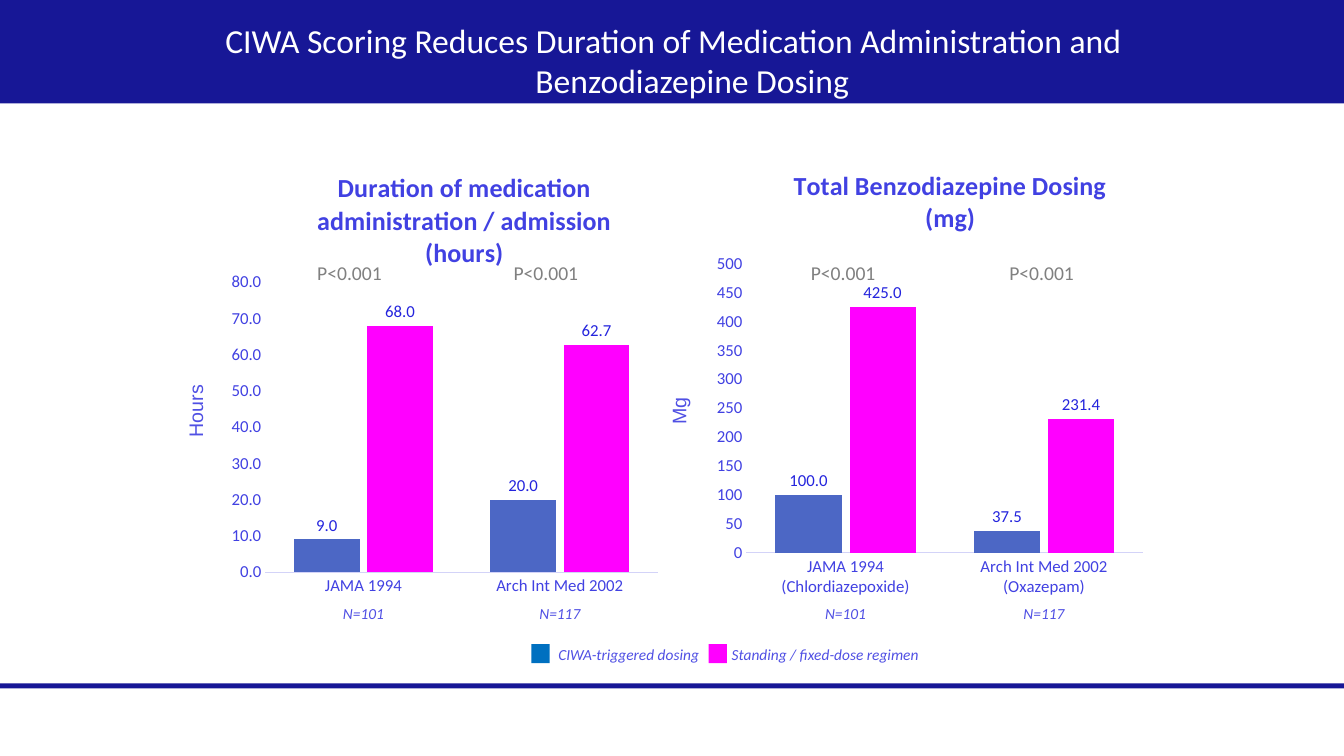
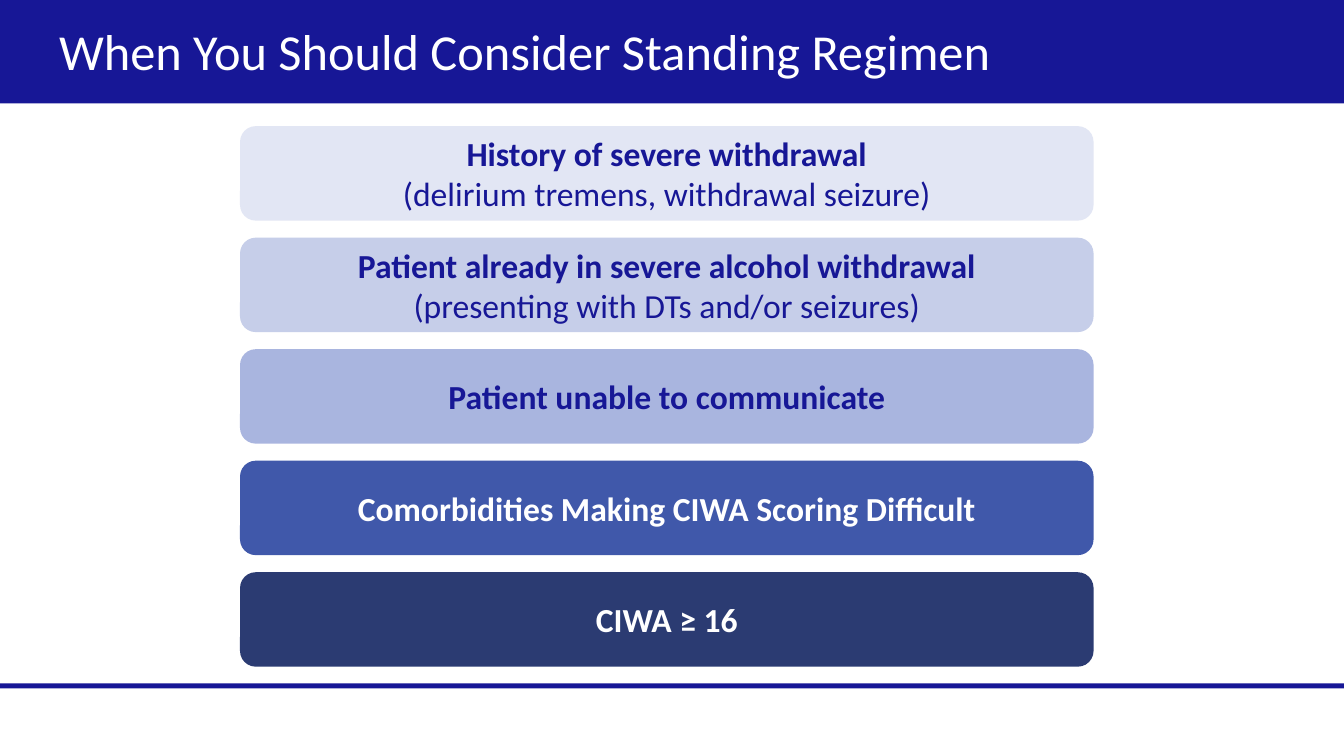
from lxml import etree
from pptx import Presentation
from pptx.chart.data import CategoryChartData
from pptx.dml.color import RGBColor
from pptx.enum.chart import XL_CHART_TYPE, XL_LABEL_POSITION, XL_TICK_MARK
from pptx.enum.shapes import MSO_SHAPE
from pptx.enum.text import MSO_ANCHOR, PP_ALIGN
from pptx.oxml.ns import qn
from pptx.util import Cm, Pt

COLUMN = XL_CHART_TYPE.COLUMN_CLUSTERED
OUTSIDE = XL_LABEL_POSITION.OUTSIDE_END
NO_TICK = XL_TICK_MARK.NONE
RECT, ROUND = MSO_SHAPE.RECTANGLE, MSO_SHAPE.ROUNDED_RECTANGLE
MIDDLE = MSO_ANCHOR.MIDDLE
LEFT, CENTER = PP_ALIGN.LEFT, PP_ALIGN.CENTER

HEX = {
    "navy": "171796", "white": "FFFFFF", "bar": "4C67C5", "pink": "FF00FF",
    "key": "0070C0", "axis": "4141E2", "line": "D3D3F8", "value": "2424DD",
    "note": "5050E4", "gray": "808080", "pale": "E2E6F4", "light": "C6CEE9",
    "mid": "A9B5DF", "deep": "4058AA", "dark": "2B3B72",
}
BODY, SIDE = "Calibri", "Arial"
WIDE, HIGH = 33.87, 19.05

TITLES = [
    ("CIWA Scoring Reduces Duration of Medication Administration and "
     "Benzodiazepine Dosing", 4.5, 24.94, 24, CENTER),
    ("When You Should Consider Standing Regimen", 1.24, 31.75, 36, LEFT),
]
CHART_TOP, CHART_W, CHART_H = 3.68, 11.66, 11.71
CHARTS = [
    {"title": "Duration of medication administration / admission (hours)",
     "spot": (0.22, 0.04), "left": 5.31, "plot": (0.118, 0.293, 0.849, 0.624),
     "cats": ["JAMA 1994", "Arch Int Med 2002"],
     "rows": [(9, 20), (68, 62.7)], "max": 80, "step": 10, "fmt": "0.0",
     "unit": "Hours", "unit_x": 4.93, "shift": -0.35},
    {"title": "Total Benzodiazepine Dosing (mg)",
     "spot": (0.2, 0.035), "left": 17.55, "plot": (0.108, 0.253, 0.858, 0.622),
     "cats": ["JAMA 1994 (Chlordiazepoxide)", "Arch Int Med 2002 (Oxazepam)"],
     "rows": [(100, 37.5), (425, 231.4)], "max": 500, "step": 50, "fmt": "0",
     "unit": "Mg", "unit_x": 17.11, "shift": -0.06},
]
COUNTS = ["N=101", "N=117"]
KEYS = [
    ("CIWA-triggered dosing", "key", 13.39, 13.82, 4.09),
    ("Standing / fixed-dose regimen", "pink", 17.86, 18.19, 5.26),
]
CASES = [
    (["History of severe withdrawal", "(delirium tremens, withdrawal seizure)"],
     "pale", "navy"),
    (["Patient already in severe alcohol withdrawal",
      "(presenting with DTs and/or seizures)"], "light", "navy"),
    (["Patient unable to communicate"], "mid", "navy"),
    (["Comorbidities Making CIWA Scoring Difficult"], "deep", "white"),
    (["CIWA ≥ 16"], "dark", "white"),
]


def rgb(name):
    return RGBColor.from_string(HEX[name])


def style(font, size, color, face=BODY, bold=False, italic=False):
    font.size, font.name = Pt(size), face
    font.bold, font.italic = bold, italic
    font.color.rgb = rgb(color)


def block(slide, kind, x, y, w, h, color):
    shape = slide.shapes.add_shape(kind, Cm(x), Cm(y), Cm(w), Cm(h))
    shape.shadow.inherit = False
    shape.fill.solid()
    shape.fill.fore_color.rgb = rgb(color)
    shape.line.fill.background()
    return shape


def label(slide, text, x, y, w, h, size, color, align=CENTER, wrap=False, **look):
    box = slide.shapes.add_textbox(Cm(x), Cm(y), Cm(w), Cm(h))
    box.text_frame.word_wrap = wrap
    para = box.text_frame.paragraphs[0]
    para.text, para.alignment = text, align
    style(para.font, size, color, **look)
    return box


def start(deck, title):
    slide = deck.slides.add_slide(deck.slide_layouts[6])
    block(slide, RECT, 0, 0, WIDE, 2.61, "navy")
    block(slide, RECT, 0, 17.22, WIDE, 0.13, "navy")
    text, x, w, size, align = title
    box = label(slide, text, x, 0.38, w, 1.88, size, "white", align, True)
    props = box.text_frame.paragraphs[0]._p.get_or_add_pPr()
    props.set("marL", str(Cm(0.95)))
    props.set("indent", str(Cm(-0.95)))
    return slide


def place(parent, spots, inner=False):
    layout = parent.find(qn("c:layout"))
    if layout is None:
        layout = etree.Element(qn("c:layout"))
        parent.insert(1 if parent.find(qn("c:tx")) is not None else 0, layout)
    manual = etree.SubElement(layout, qn("c:manualLayout"))
    pairs = [("layoutTarget", "inner")] if inner else []
    pairs += [("xMode", "edge"), ("yMode", "edge")]
    pairs += zip("xywh", map(str, spots))
    for tag, val in pairs:
        etree.SubElement(manual, qn("c:" + tag)).set("val", val)


def draw_chart(slide, item):
    data = CategoryChartData()
    data.categories = item["cats"]
    for i, row in enumerate(item["rows"], 1):
        data.add_series(f"Series {i}", row)
    chart = slide.shapes.add_chart(
        COLUMN, Cm(item["left"]), Cm(CHART_TOP), Cm(CHART_W), Cm(CHART_H), data).chart
    style(chart.font, 10, "navy")
    chart.has_legend = False
    para = chart.chart_title.text_frame.paragraphs[0]
    para.text = item["title"]
    style(para.font, 18.6, "axis", bold=True)
    chart.chart_title.include_in_layout = False
    place(chart.chart_title._element, item["spot"])
    place(chart._chartSpace.chart.plotArea, item["plot"], True)

    cat, val = chart.category_axis, chart.value_axis
    for axis in (cat, val):
        axis.major_tick_mark = axis.minor_tick_mark = NO_TICK
        style(axis.tick_labels.font, 12, "axis")
    cat.format.line.color.rgb = rgb("line")
    cat.format.line.width = Pt(0.75)
    val.format.line.fill.background()
    val.has_major_gridlines = False
    val.minimum_scale, val.maximum_scale = 0, item["max"]
    val.major_unit = item["step"]
    val.tick_labels.number_format = item["fmt"]
    val.tick_labels.number_format_is_linked = False

    plot = chart.plots[0]
    plot.gap_width, plot.overlap = 88, -12
    plot.vary_by_categories = False
    for series, color in zip(plot.series, ("bar", "pink")):
        series.format.fill.solid()
        series.format.fill.fore_color.rgb = rgb(color)
        tags = series.data_labels
        tags.show_value, tags.position = True, OUTSIDE
        tags.number_format, tags.number_format_is_linked = "0.0", False
        style(tags.font, 12, "value")


def draw_doses(deck):
    slide = start(deck, TITLES[0])
    for item in CHARTS:
        draw_chart(slide, item)
        x, _, w, _ = item["plot"]
        for i, count in enumerate(COUNTS):
            mid = item["left"] + CHART_W * (x + w * (i + 0.5) / len(COUNTS))
            label(slide, "P<0.001", mid + item["shift"] - 1.08, 6.45, 2.16, 0.86,
                  14, "gray")
            label(slide, count, mid - 0.79, 15.09, 1.58, 0.74, 11, "note", italic=True)
        unit = label(slide, item["unit"], item["unit_x"] - 0.92, 9.93, 1.84, 0.86,
                     14, "note", face=SIDE)
        unit.rotation = 270
    for text, color, mark, x, w in KEYS:
        block(slide, RECT, mark, 16.23, 0.46, 0.48, color)
        label(slide, text, x, 16.13, w, 0.74, 11, "note", LEFT, italic=True)


def draw_cases(deck):
    slide = start(deck, TITLES[1])
    for i, (lines, fill, ink) in enumerate(CASES):
        card = block(slide, ROUND, 6.05, 3.18 + i * 2.81, 21.51, 2.38, fill)
        frame = card.text_frame
        frame.text = "\n".join(lines)
        frame.word_wrap, frame.vertical_anchor = True, MIDDLE
        for j, para in enumerate(frame.paragraphs):
            para.alignment = CENTER
            style(para.font, 24, ink, bold=j == 0)


def main():
    deck = Presentation()
    deck.slide_width, deck.slide_height = Cm(WIDE), Cm(HIGH)
    draw_doses(deck)
    draw_cases(deck)
    deck.save("out.pptx")


if __name__ == "__main__":
    main()
